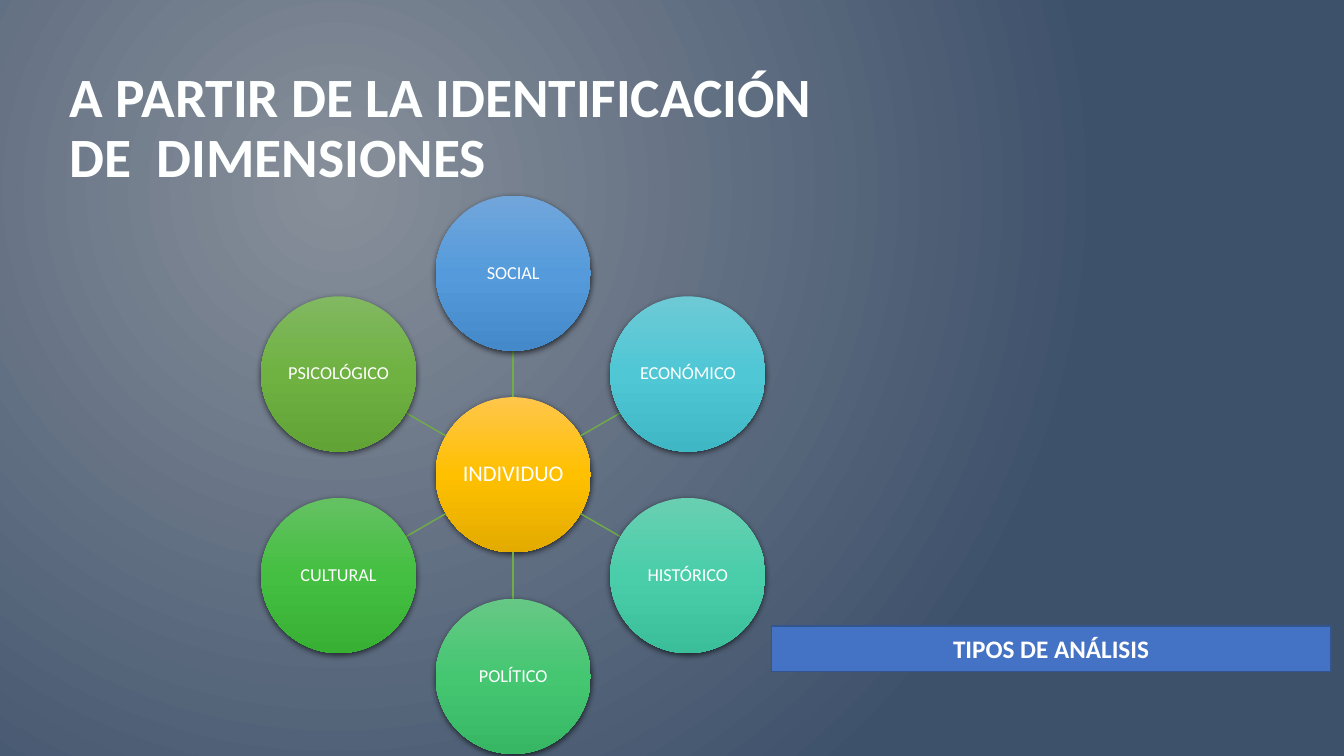
from math import cos, radians, sin

from lxml.etree import SubElement
from pptx import Presentation
from pptx.dml.color import RGBColor
from pptx.enum.shapes import MSO_CONNECTOR as Link, MSO_SHAPE as Shape
from pptx.enum.text import MSO_ANCHOR as Anchor, MSO_AUTO_SIZE as AutoSize, PP_ALIGN as Align
from pptx.oxml.ns import qn
from pptx.util import Inches, Pt

CENTER_X, CENTER_Y = 5.09, 4.71
ORBIT, RADIUS = 2.0, 0.77
INDIVIDUAL = ("FFC64B", "FFC000", "E3AB00")
DIMENSIONS = [
    ("SOCIAL", ("71A6DB", "559BDB", "448ACA")),
    ("ECONÓMICO", ("6DCAD5", "4FC7D5", "3FB7C4")),
    ("HISTÓRICO", ("69CFB1", "4ACEAA", "3BBE9A")),
    ("POLÍTICO", ("66C885", "45C772", "37B764")),
    ("CULTURAL", ("64C162", "44BF41", "37B034")),
    ("PSICOLÓGICO", ("81B861", "6FB242", "62A336")),
]


def color(value):
    return RGBColor.from_string(value)


def add_node(parent, tag, **attributes):
    return SubElement(parent, qn(tag), {name: str(value) for name, value in attributes.items()})


class DimensionSlide:
    """Hold the shared style and the current slide, and draw its elements."""

    font = {"name": "Calibri", "bold": False}
    white = "FFFFFF"

    def __init__(self, deck):
        self.page = deck.slides.add_slide(deck.slide_layouts[5])

    def gradient(self, fill, owner, colors):
        fill.gradient()
        node = next(owner.iter(qn("a:gradFill")))
        for child in list(node):
            node.remove(child)
        stops = add_node(node, "a:gsLst")
        for index, value in enumerate(colors):
            stop = add_node(stops, "a:gs", pos=100000 * index // (len(colors) - 1))
            add_node(stop, "a:srgbClr", val=value)
        return node

    def background(self, colors):
        node = self.gradient(self.page.background.fill, self.page._element, colors)
        shade = add_node(node, "a:path", path="circle")
        add_node(shade, "a:fillToRect", l=50000, t=50000, r=100000, b=100000)

    def label(self, shape, text, align=Align.CENTER, spacing=0.9, tint=white, **format_values):
        frame = shape.text_frame
        frame.word_wrap = True
        frame.auto_size = AutoSize.NONE
        frame.vertical_anchor = Anchor.MIDDLE
        para = frame.paragraphs[0]
        para.alignment = align
        para.line_spacing = spacing
        span = para.add_run()
        span.text = text
        for name, value in {**self.font, **format_values}.items():
            setattr(span.font, name, value)
        span.font.color.rgb = color(tint)

    def title(self, text, left, top, width, height):
        box = self.page.shapes.title
        box.left, box.top = Inches(left), Inches(top)
        box.width, box.height = Inches(width), Inches(height)
        self.label(box, text, Align.LEFT, tint="FEFFFF", size=Pt(39.6), bold=True)

    def circle(self, text, x, y, colors, size):
        side = Inches(2 * RADIUS)
        disc = self.page.shapes.add_shape(
            Shape.OVAL, Inches(x - RADIUS), Inches(y - RADIUS), side, side)
        node = self.gradient(disc.fill, disc._element, colors)
        add_node(node, "a:lin", ang=5400000, scaled=0)
        disc.line.fill.background()
        effects = add_node(disc._element.spPr, "a:effectLst")
        shadow = add_node(effects, "a:outerShdw", blurRad=Pt(4.5), dist=Pt(1.5),
                          dir=5400000, algn="ctr", rotWithShape=0)
        add_node(add_node(shadow, "a:srgbClr", val="000000"), "a:alpha", val=63000)
        for margin in ("margin_left", "margin_top", "margin_right", "margin_bottom"):
            setattr(disc.text_frame, margin, Inches(0.01))
        self.label(disc, text, size=Pt(size))

    def spoke(self, angle):
        ends = [Inches(value) for reach in (RADIUS, ORBIT - RADIUS)
                for value in (CENTER_X + reach * cos(angle), CENTER_Y + reach * sin(angle))]
        line = self.page.shapes.add_connector(Link.STRAIGHT, *ends)
        line.line.color.rgb = color("70AD47")
        line.line.width = Pt(1)
        add_node(line._element.spPr, "a:effectLst")

    def banner(self, text, left, top, width, height):
        bar = self.page.shapes.add_shape(
            Shape.RECTANGLE, Inches(left), Inches(top), Inches(width), Inches(height))
        bar.shadow.inherit = False
        bar.fill.solid()
        bar.fill.fore_color.rgb = color("4472C4")
        bar.line.color.rgb = color("325491")
        bar.line.width = Pt(1)
        self.label(bar, text, spacing=1.0, size=Pt(18), bold=True)


def main():
    deck = Presentation()
    deck.slide_width, deck.slide_height = Inches(13.33), Inches(7.5)
    slide = DimensionSlide(deck)
    slide.background(("878F9A", "3E516B"))
    slide.title("A PARTIR DE LA IDENTIFICACIÓN DE  DIMENSIONES", 0.59, 0.86, 7.81, 0.85)
    slide.circle("INDIVIDUO", CENTER_X, CENTER_Y, INDIVIDUAL, 16)
    for index, (name, colors) in enumerate(DIMENSIONS):
        angle = radians(360 / len(DIMENSIONS) * index - 90)
        slide.spoke(angle)
        slide.circle(name, CENTER_X + ORBIT * cos(angle), CENTER_Y + ORBIT * sin(angle), colors, 13)
    slide.banner("TIPOS DE ANÁLISIS", 7.65, 6.21, 5.55, 0.45)
    deck.save("out.pptx")


if __name__ == "__main__":
    main()
